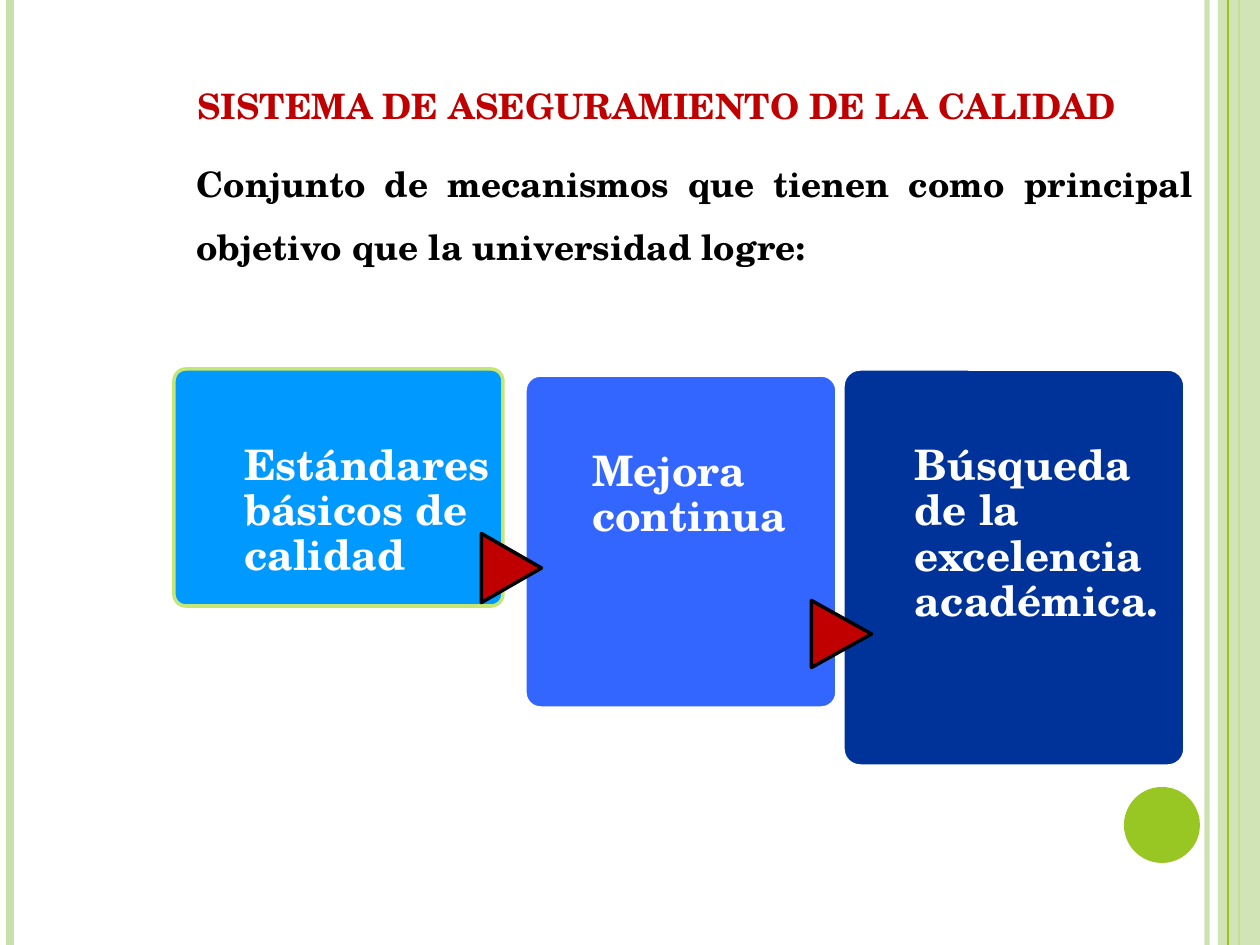
from dataclasses import dataclass

from lxml import etree
from pptx import Presentation
from pptx.dml.color import RGBColor
from pptx.enum.shapes import MSO_CONNECTOR, MSO_SHAPE
from pptx.enum.text import MSO_ANCHOR, MSO_AUTO_SIZE, PP_ALIGN
from pptx.oxml.ns import qn
from pptx.util import Emu, Pt

RECTANGLE = MSO_SHAPE.RECTANGLE
ELLIPSE = MSO_SHAPE.OVAL
ROUNDED = MSO_SHAPE.ROUNDED_RECTANGLE
TRIANGLE = MSO_SHAPE.FLOWCHART_EXTRACT
STRAIGHT = MSO_CONNECTOR.STRAIGHT
TOP = MSO_ANCHOR.TOP
LEFT, CENTER, JUSTIFY = PP_ALIGN.LEFT, PP_ALIGN.CENTER, PP_ALIGN.JUSTIFY
GROW = MSO_AUTO_SIZE.SHAPE_TO_FIT_TEXT

PX_PER_INCH = 126
PAGE_WIDTH, PAGE_HEIGHT = 1260, 945


@dataclass(frozen=True)
class Theme:
    font: str = "TeX Gyre Schola"
    body_size: int = 20
    step_size: int = 24
    red: str = "C00000"
    black: str = "000000"
    white: str = "FFFFFF"
    pale_green: str = "CAE0AC"
    green: str = "98C723"
    lime: str = "C5E672"
    sky: str = "0099FF"
    blue: str = "3366FF"
    navy: str = "003399"


THEME = Theme()


def px(length):
    return Emu(round(length * 914400 / PX_PER_INCH))


def set_alpha(fill_parent, percent):
    """Make the solid fill under the given XML element partly transparent."""
    color = fill_parent.find(qn("a:solidFill"))[0]
    etree.SubElement(color, qn("a:alpha"), val=str(percent * 1000))


def add_vertical_rule(page, x, color, width, alpha=100):
    rule = page.shapes.add_connector(STRAIGHT, px(x), 0, px(x), px(PAGE_HEIGHT))
    rule.line.color.rgb = RGBColor.from_string(color)
    rule.line.width = Pt(width)
    properties = rule.line._get_or_add_ln().getparent()
    etree.SubElement(properties, qn("a:effectLst"))
    if alpha < 100:
        set_alpha(properties.find(qn("a:ln")), alpha)


def add_block(page, kind, frame, fill, outline=None):
    block = page.shapes.add_shape(kind, *map(px, frame))
    block.shadow.inherit = False
    block.fill.solid()
    block.fill.fore_color.rgb = RGBColor.from_string(fill)
    if outline:
        block.line.color.rgb = RGBColor.from_string(outline)
        block.line.width = Pt(2)
    else:
        block.line.fill.background()
    return block


def add_text(page, frame, text, size, color, align, spacing):
    box = page.shapes.add_textbox(*map(px, frame))
    area = box.text_frame
    area.word_wrap = True
    area.vertical_anchor = TOP
    para = area.paragraphs[0]
    para.text = text
    para.alignment = align
    para.line_spacing = spacing
    para.font.name = THEME.font
    para.font.size = Pt(size)
    para.font.bold = True
    para.font.color.rgb = RGBColor.from_string(color)
    return area


def add_step_text(page, frame, text):
    area = add_text(page, frame, text, THEME.step_size, THEME.white, LEFT, 0.9)
    area.margin_left = area.margin_right = area.margin_bottom = 0
    area.margin_top = px(75)


def add_step(page, frame, fill, outline, arrow, text_left, text_width, text):
    """Draw a card, the arrow leading into it (if any) and its text."""
    card = add_block(page, ROUNDED, frame, fill, outline)
    card.adjustments[0] = 0.05
    if arrow:
        pointer = add_block(page, TRIANGLE, arrow, THEME.red, THEME.black)
        pointer.rotation = 90
    _, top, _, height = frame
    add_step_text(page, (text_left, top, text_width, height), text)


def add_side_decoration(page):
    add_vertical_rule(page, 1207, THEME.pale_green, 3, alpha=93)
    add_vertical_rule(page, 10, THEME.pale_green, 4.5)
    add_vertical_rule(page, 1239, THEME.green, 1.5)
    band = add_block(page, RECTANGLE, (1218, 0, 42, PAGE_HEIGHT), THEME.pale_green)
    set_alpha(band._element.spPr, 87)
    add_vertical_rule(page, 1228, THEME.green, 0.75)
    add_block(page, ELLIPSE, (1124, 787, 76, 76), THEME.green)


def main():
    deck = Presentation()
    deck.slide_width, deck.slide_height = px(PAGE_WIDTH), px(PAGE_HEIGHT)
    page = deck.slides.add_slide(deck.slide_layouts[6])
    add_side_decoration(page)

    headings = [
        ((94, 57, 1126, 68), "SISTEMA DE ASEGURAMIENTO DE LA CALIDAD",
         THEME.red, CENTER),
        ((184, 135, 1022, 140),
         "Conjunto de mecanismos que tienen como principal objetivo "
         "que la universidad logre:", THEME.black, JUSTIFY),
    ]
    for frame, text, color, align in headings:
        area = add_text(page, frame, text, THEME.body_size, color, align, 1.5)
        area.auto_size = GROW

    steps = [
        ((174, 369, 329, 237), THEME.sky, THEME.lime, None,
         244, 246, "Estándares básicos de calidad"),
        ((525, 375, 312, 333), THEME.blue, THEME.white, (477, 538, 69, 60),
         592, 232, "Mejora continua"),
        ((843, 369, 342, 397), THEME.navy, THEME.white, (808, 604, 67, 60),
         915, 256, "Búsqueda de la excelencia académica."),
    ]
    for step in steps:
        add_step(page, *step)

    deck.save("out.pptx")


if __name__ == "__main__":
    main()
